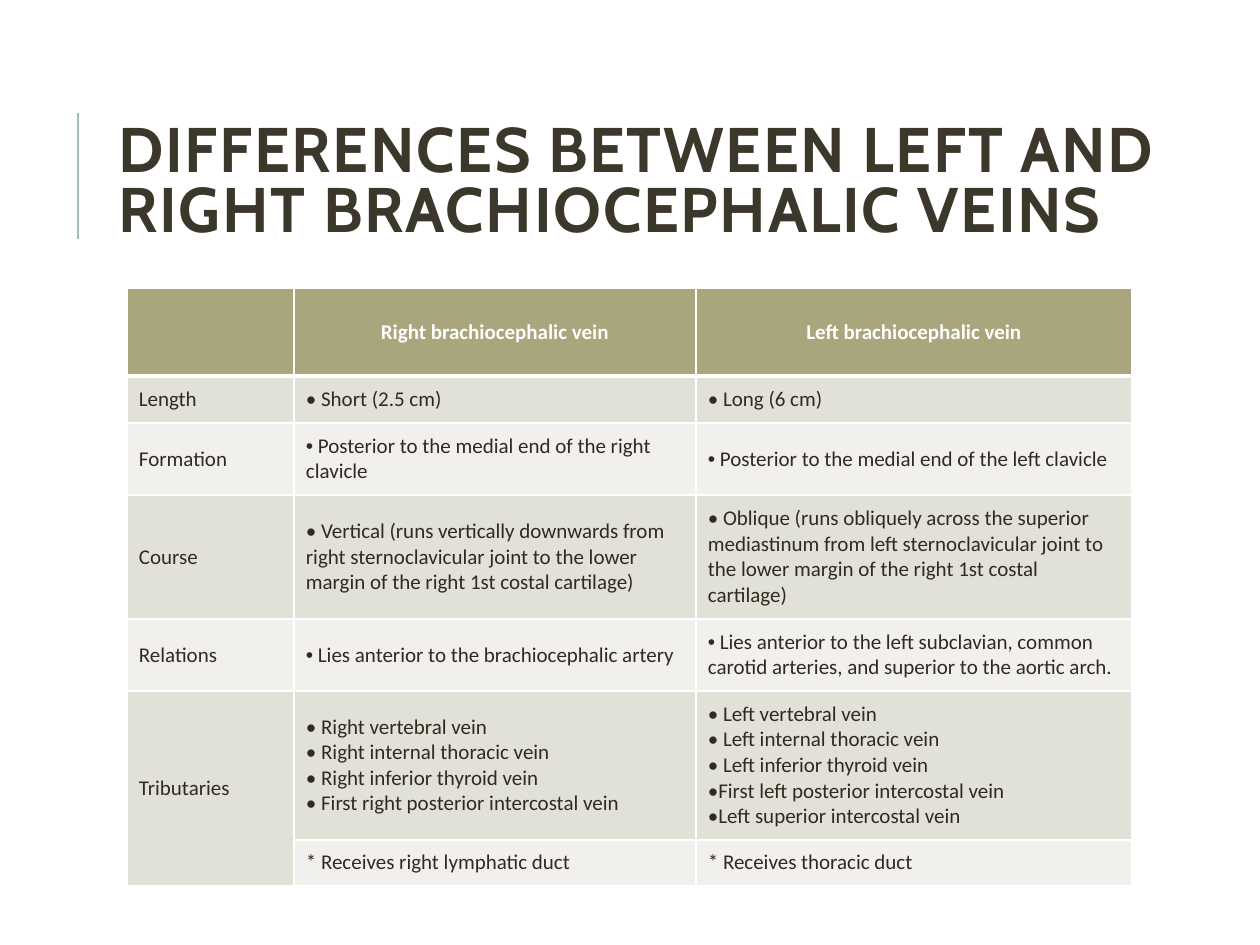
from dataclasses import dataclass

from lxml.etree import SubElement
from pptx import Presentation
from pptx.dml.color import RGBColor
from pptx.enum.shapes import MSO_CONNECTOR as Connector
from pptx.enum.text import MSO_ANCHOR as Anchor, PP_ALIGN as Align
from pptx.oxml import parse_xml
from pptx.oxml.ns import nsdecls, qn
from pptx.util import Emu, Pt

COLORS = {
    "title": "3B372A",
    "rule": "9CBEBD",
    "header": "A9A57C",
    "dark_band": "E2E1D7",
    "light_band": "F1F0EC",
    "text": "2E2B21",
    "white": "FFFFFF",
}
COLUMN_WIDTHS = (167, 402, 436)


@dataclass(frozen=True)
class Row:
    """A table row with its height in px and its three texts."""

    height: int
    label: str
    right: str
    left: str
    bulleted: bool = False


ROWS = (
    Row(88, "", "Right brachiocephalic vein", "Left brachiocephalic vein"),
    Row(47, "Length", "• Short (2.5 cm)", "• Long (6 cm)"),
    Row(72, "Formation",
        " Posterior to the medial end of the right clavicle",
        " Posterior to the medial end of the left clavicle", True),
    Row(124, "Course",
        "• Vertical (runs vertically downwards from right sternoclavicular joint "
        "to the lower margin of the right 1st costal cartilage)",
        "• Oblique (runs obliquely across the superior mediastinum from left "
        "sternoclavicular joint to the lower margin of the right 1st costal cartilage)"),
    Row(72, "Relations",
        " Lies anterior to the brachiocephalic artery",
        " Lies anterior to the left subclavian, common carotid arteries, "
        "and superior to the aortic arch.", True),
    Row(149, "Tributaries",
        "• Right vertebral vein\n• Right internal thoracic vein\n"
        "• Right inferior thyroid vein\n• First right posterior intercostal vein",
        "• Left vertebral vein\n• Left internal thoracic vein\n"
        "• Left inferior thyroid vein\n"
        "•First left posterior intercostal vein\v•Left superior intercostal vein"),
    Row(46, "", "* Receives right lymphatic duct", "* Receives thoracic duct"),
)


def px(length: int) -> Emu:
    """Turn px into EMU."""
    return Emu(round(length * 914400 / 126))


def color(name: str) -> RGBColor:
    """Look up a named colour."""
    return RGBColor.from_string(COLORS[name])


def set_font(paragraph, typeface: str, size: int, color_name: str, bold: bool) -> None:
    """Style a whole paragraph."""
    font = paragraph.font
    font.name, font.size, font.bold = typeface, Pt(size), bold
    font.color.rgb = color(color_name)


def add_rule(slide) -> None:
    """Draw the vertical rule beside the title."""
    rule = slide.shapes.add_connector(Connector.STRAIGHT, px(78), px(239), px(78), px(113))
    rule.line.color.rgb = color("rule")
    rule.line.width = Pt(1.5)
    SubElement(rule._element.spPr, qn("a:effectLst"))


def add_title(slide, text: str) -> None:
    """Add the two-line slide title."""
    frame = slide.shapes.add_textbox(px(106), px(81), px(1101), px(207)).text_frame
    frame.word_wrap = True
    frame.vertical_anchor = Anchor.MIDDLE
    paragraph = frame.paragraphs[0]
    paragraph.text = text
    paragraph.line_spacing = 0.8
    set_font(paragraph, "Cabin", 36, "title", True)
    paragraph.runs[0].font._element.set("spc", "100")


def set_borders(cell, top: int, bottom: int) -> None:
    """Give a cell white borders, with top and bottom widths in points."""
    properties = cell._tc.get_or_add_tcPr()
    widths = {"lnL": 1, "lnR": 1, "lnT": top, "lnB": bottom}
    for index, (tag, width) in enumerate(widths.items()):
        properties.insert(index, parse_xml(
            f'<a:{tag} {nsdecls("a")} w="{Pt(width)}"><a:solidFill>'
            f'<a:srgbClr val="{COLORS["white"]}"/></a:solidFill></a:{tag}>'))


def add_bullet(paragraph) -> None:
    """Put a bullet character before a paragraph."""
    properties = paragraph._p.get_or_add_pPr()
    bullet = parse_xml(f'<a:buChar {nsdecls("a")} char="•"/>')
    typeface = parse_xml(f'<a:buFont {nsdecls("a")} typeface="Arial"/>')
    properties.insert(0, typeface)
    properties.insert(1, bullet)


def fill_cell(cell, text: str, row_index: int, bulleted: bool) -> None:
    """Write and style one table cell."""
    is_header = row_index == 0
    band = "dark_band" if row_index % 2 else "light_band"
    cell.fill.solid()
    cell.fill.fore_color.rgb = color("header" if is_header else band)
    set_borders(cell, 3 if row_index == 1 else 1, 3 if is_header else 1)
    cell.vertical_anchor = Anchor.MIDDLE
    cell.margin_left = cell.margin_right = px(6 if is_header else 12)
    cell.margin_top = cell.margin_bottom = px(0 if is_header else 10)
    cell.text_frame.text = text
    for paragraph in cell.text_frame.paragraphs:
        paragraph.alignment = Align.CENTER if is_header else Align.LEFT
        set_font(paragraph, "Calibri", 12, "white" if is_header else "text", is_header)
        if bulleted:
            add_bullet(paragraph)


def add_comparison(slide) -> None:
    """Add the table that compares the two veins."""
    table = slide.shapes.add_table(
        len(ROWS), len(COLUMN_WIDTHS), px(127), px(288),
        px(sum(COLUMN_WIDTHS)), px(sum(row.height for row in ROWS))).table
    table.horz_banding = False
    for column, width in zip(table.columns, COLUMN_WIDTHS):
        column.width = px(width)
    for row_index, row in enumerate(ROWS):
        table.rows[row_index].height = px(row.height)
        for column_index, text in enumerate((row.label, row.right, row.left)):
            fill_cell(table.cell(row_index, column_index), text, row_index,
                      row.bulleted and column_index > 0)
    last = len(ROWS) - 1
    table.cell(last - 1, 0).merge(table.cell(last, 0))


def main() -> None:
    """Build and save the slide."""
    presentation = Presentation()
    presentation.slide_width, presentation.slide_height = px(1260), px(945)
    slide = presentation.slides.add_slide(presentation.slide_layouts[6])
    add_rule(slide)
    add_title(slide, "DIFFERENCES BETWEEN LEFT AND RIGHT BRACHIOCEPHALIC VEINS")
    add_comparison(slide)
    presentation.save("out.pptx")


if __name__ == "__main__":
    main()
